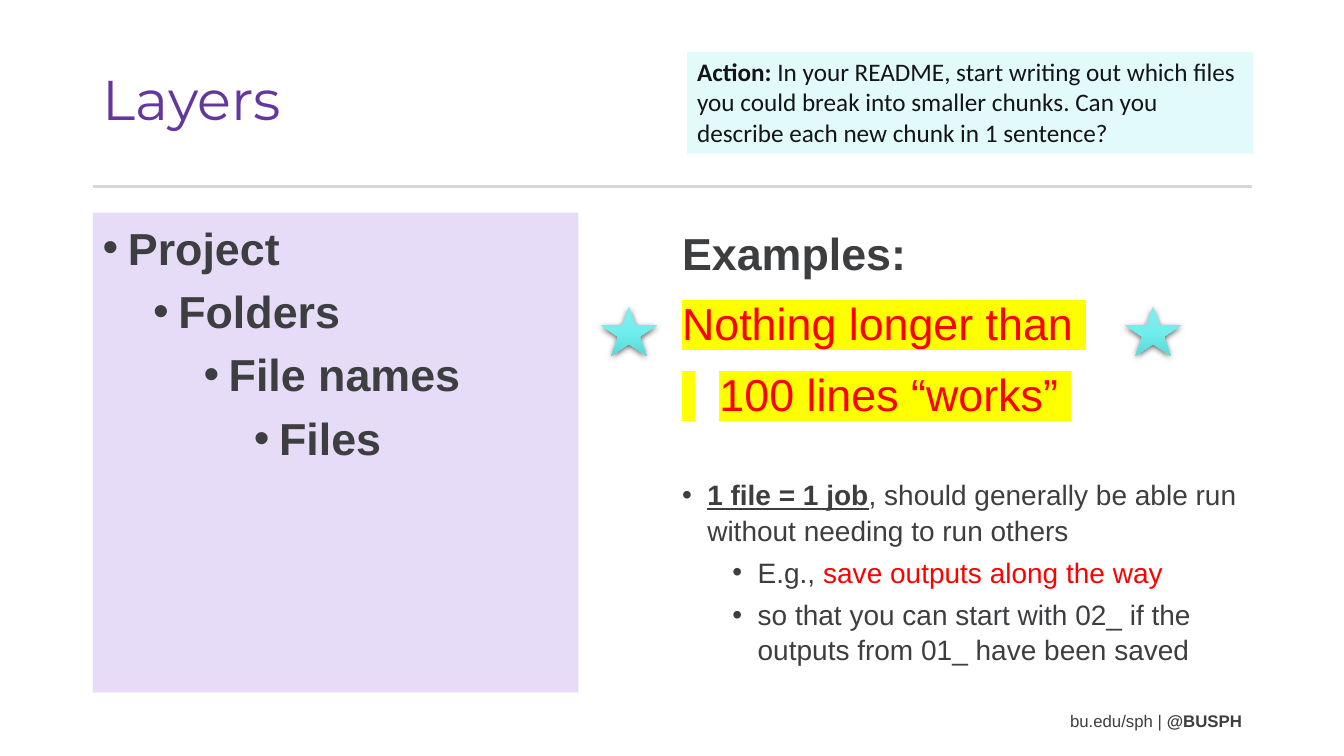
from lxml.etree import SubElement
from pptx import Presentation
from pptx.dml.color import RGBColor
from pptx.enum.shapes import MSO_CONNECTOR as CONN, MSO_SHAPE as SHAPE
from pptx.enum.text import MSO_ANCHOR as ANCHOR, PP_ALIGN as ALIGN
from pptx.oxml.ns import qn
from pptx.util import Cm, Pt

GREY, RED, YELLOW, PURPLE, INK = "3C3E40", "FF0000", "FFFF00", "64379F", "141518"
LILAC, MINT, RULE = "E7DCF8", "E3FAFA", "D6D6D6"
BOLD = {"bold": True}
MARKED = {"color": RED, "mark": YELLOW}
SMALL = {"size": 20}

TITLE = [{"runs": [("Layers", {})], "spacing": 0.9}]
FOOTER = [{"runs": [("bu.edu/sph | ", {}), ("@BUSPH", BOLD)], "align": ALIGN.RIGHT}]
ACTION = [{"runs": [
    ("Action: ", BOLD),
    ("In your README, start writing out which files you could break into "
     "smaller chunks. Can you describe each new chunk in 1 sentence?", {}),
]}]
LAYERS = [
    {"runs": [(name, BOLD)], "level": level, "before": 5 if level else 0, "spacing": 1.05}
    for level, name in enumerate(["Project", "Folders", "File names", "Files"])
]
EXAMPLES = [
    {"runs": [("Examples:", BOLD)], "spacing": 1.5},
    {"runs": [("Nothing longer than ", MARKED)], "before": 10, "spacing": 1.05},
    {"runs": [(" ", {**MARKED, "tracking": 17.8}), ("100 lines “works” ", MARKED)],
     "before": 10, "spacing": 1.05},
    {"runs": [("1 file = 1 job", {**SMALL, **BOLD, "underline": True}),
              (", should generally be able run without needing to run others", SMALL)],
     "level": 0, "before": 40, "spacing": 1.05},
    {"runs": [("E.g., ", SMALL), ("save outputs along the way", {**SMALL, "color": RED})],
     "level": 1, "before": 5, "spacing": 1.05},
    {"runs": [("so that you can start with 02_ if the outputs from 01_ have been saved", SMALL)],
     "level": 1, "before": 5, "spacing": 1.05},
]

LEFT, WIDTH = 2.34, 29.21
RULE_Y = 4.7
STAR_LEFTS, STAR_TOP, STAR_SIZE = (15.14, 28.35), 7.72, (1.42, 1.24)
STAR_STOPS = [(0, "87ECEB"), (50, "6FEEED"), (100, "5CDAD9")]
BULLET_INDENT, LEVEL_STEP = 0.635, 1.27


def rgb(value):
    return RGBColor.from_string(value)


def add_run(p, text, font, size, color, bold=False, underline=False, mark=None, tracking=0):
    r = p.add_run()
    r.text = text
    r.font.size = Pt(size)
    r.font.bold = bold
    r.font.underline = underline
    r.font.color.rgb = rgb(color)
    rPr = r._r.get_or_add_rPr()
    if mark:
        SubElement(SubElement(rPr, qn("a:highlight")), qn("a:srgbClr"), val=mark)
    if tracking:
        rPr.set("spc", str(round(tracking * 100)))
    r.font.name = font


def add_bullet(p, level):
    pPr = p._p.get_or_add_pPr()
    pPr.set("marL", str(Cm(BULLET_INDENT + level * LEVEL_STEP)))
    pPr.set("indent", str(-Cm(BULLET_INDENT)))
    SubElement(pPr, qn("a:buFont"), typeface="Arial")
    SubElement(pPr, qn("a:buChar"), char="•")
    p.level = level


def add_text(s, box, paragraphs, font, size, color, anchor=ANCHOR.TOP, fill=None):
    lengths = [Cm(v) for v in box]
    if fill:
        sp = s.shapes.add_shape(SHAPE.RECTANGLE, *lengths)
        sp.shadow.inherit = False
        sp.fill.solid()
        sp.fill.fore_color.rgb = rgb(fill)
        sp.line.fill.background()
    else:
        sp = s.shapes.add_textbox(*lengths)
    tf = sp.text_frame
    tf.word_wrap = True
    tf.vertical_anchor = anchor
    for i, item in enumerate(paragraphs):
        p = tf.add_paragraph() if i else tf.paragraphs[0]
        if "level" in item:
            add_bullet(p, item["level"])
        p.alignment = item.get("align", ALIGN.LEFT)
        p.line_spacing = item.get("spacing", 1.0)
        if item.get("before"):
            p.space_before = Pt(item["before"])
        for text, style in item["runs"]:
            add_run(p, text, font, **{"size": size, "color": color, **style})


def add_rule(s):
    line = s.shapes.add_connector(
        CONN.STRAIGHT, Cm(LEFT), Cm(RULE_Y), Cm(LEFT + WIDTH), Cm(RULE_Y))
    line.line.color.rgb = rgb(RULE)
    line.line.width = Pt(1.5)
    SubElement(line._element.spPr, qn("a:effectLst"))


def add_star(s, left):
    sp = s.shapes.add_shape(
        SHAPE.STAR_5_POINT, Cm(left), Cm(STAR_TOP), *[Cm(v) for v in STAR_SIZE])
    sp.line.fill.background()
    sp.fill.gradient()
    sp.fill.gradient_angle = 270
    spPr = sp._element.spPr
    stops = spPr.find(".//" + qn("a:gsLst"))
    stops.clear()
    for position, color in STAR_STOPS:
        stop = SubElement(stops, qn("a:gs"), pos=str(position * 1000))
        SubElement(stop, qn("a:srgbClr"), val=color)
    sp.shadow.inherit = False
    shadow = SubElement(
        spPr.find(qn("a:effectLst")), qn("a:outerShdw"), blurRad=str(Pt(4.5)),
        dist=str(Pt(1.5)), dir="5400000", rotWithShape="0")
    tint = SubElement(shadow, qn("a:srgbClr"), val="000000")
    SubElement(tint, qn("a:alpha"), val="63000")


def main():
    prs = Presentation()
    prs.slide_width, prs.slide_height = Cm(33.87), Cm(19.05)
    s = prs.slides.add_slide(prs.slide_layouts[6])
    add_text(s, (23.93, 17.65, 7.62, 1.02), FOOTER, "Arial", 12, GREY, ANCHOR.MIDDLE)
    add_rule(s)
    add_text(s, (LEFT, 0.74, WIDTH, 3.68), TITLE, "Montserrat", 40, PURPLE, ANCHOR.MIDDLE)
    add_text(s, (LEFT, 5.36, 12.24, 12.09), LAYERS, "Arial", 32, GREY, fill=LILAC)
    add_text(s, (16.94, 4.88, 14.61, 12.09), EXAMPLES, "Arial", 32, GREY)
    add_text(s, (17.32, 1.3, 14.27, 2.57), ACTION, "Calibri", 18, INK, fill=MINT)
    for left in STAR_LEFTS:
        add_star(s, left)
    prs.save("out.pptx")


if __name__ == "__main__":
    main()
